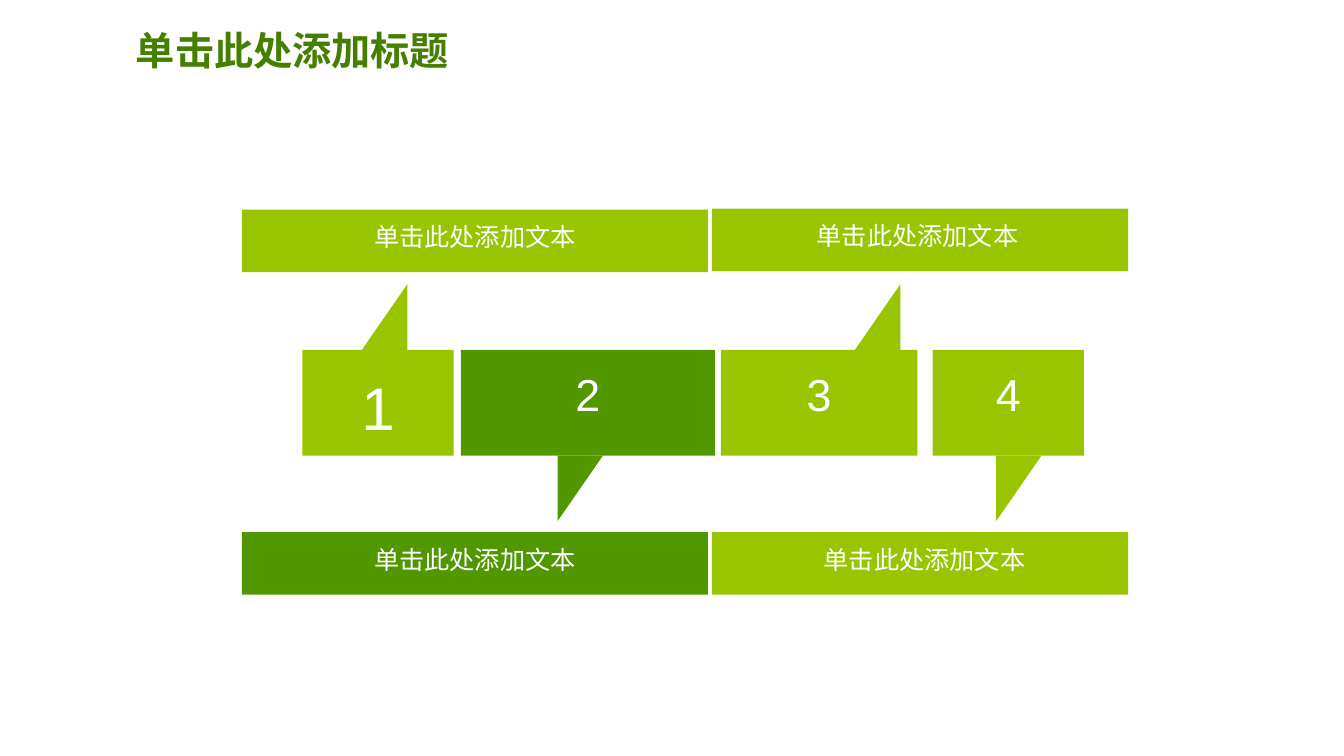
from dataclasses import dataclass

from pptx import Presentation
from pptx.dml.color import RGBColor
from pptx.enum.shapes import MSO_SHAPE as Preset
from pptx.enum.text import MSO_ANCHOR as Anchor, PP_ALIGN as Align
from pptx.util import Inches, Pt


@dataclass(frozen=True)
class Theme:
    white: RGBColor = RGBColor(0xFF, 0xFF, 0xFF)
    lime: RGBColor = RGBColor(0x99, 0xC4, 0x00)
    green: RGBColor = RGBColor(0x51, 0x97, 0x00)
    title: RGBColor = RGBColor(0x44, 0x7F, 0x00)
    body_font: str = "Arial"
    title_font: str = "Montserrat"
    title_size: int = 28
    label_size: int = 18
    number_size: int = 32
    first_number_size: int = 43


THEME = Theme()
LABEL = "单击此处添加文本"
BAR_HEIGHT = 0.62
BLOCK_TOP, BLOCK_HEIGHT = 3.47, 1.05
POINTER_WIDTH, POINTER_HEIGHT = 0.45, 0.65

# left, top, width, colour, left of the label
BARS = [
    (2.4, 2.08, 4.62, THEME.lime, 2.72),
    (7.06, 2.07, 4.13, THEME.lime, 7.11),
    (2.4, 5.28, 4.62, THEME.green, 2.72),
    (7.06, 5.28, 4.13, THEME.lime, 7.18),
]
# left, width, colour, left of the pointer, pointer goes up, number size
BLOCKS = [
    (3, 1.5, THEME.lime, 3.59, True, THEME.first_number_size),
    (4.57, 2.52, THEME.green, 5.53, False, THEME.number_size),
    (7.15, 1.95, THEME.lime, 8.48, True, THEME.number_size),
    (9.25, 1.5, THEME.lime, 9.88, False, THEME.number_size),
]


def add_filled(slide, preset, box, colour):
    shape = slide.shapes.add_shape(preset, *map(Inches, box))
    shape.shadow.inherit = False
    shape.fill.solid()
    shape.fill.fore_color.rgb = colour
    shape.line.fill.background()
    return shape


def add_text(slide, box, text, size, colour=THEME.white, font=THEME.body_font,
             align=Align.CENTER, inset=0.05):
    frame = slide.shapes.add_textbox(*map(Inches, box)).text_frame
    frame.word_wrap = True
    frame.margin_left = frame.margin_right = Inches(0.1)
    frame.margin_top = frame.margin_bottom = Inches(inset)
    paragraph = frame.paragraphs[0]
    paragraph.alignment = align
    run = paragraph.add_run()
    run.text = text
    run.font.name = font
    run.font.size = Pt(size)
    run.font.color.rgb = colour
    return frame


def add_title(slide, box):
    frame = add_text(slide, box, "单击此处添加标题", THEME.title_size,
                     THEME.title, THEME.title_font, Align.LEFT)
    frame.vertical_anchor = Anchor.MIDDLE
    paragraph = frame.paragraphs[0]
    paragraph.line_spacing = 0.9
    paragraph.runs[0].font.bold = True


def add_bar(slide, box, colour, label_left):
    add_filled(slide, Preset.RECTANGLE, box, colour)
    add_text(slide, (label_left, box[1] + 0.07, 3.98, 0.41), LABEL, THEME.label_size)


def add_block(slide, box, colour, number, size, pointer_left, points_up):
    """Draw a numbered block with a triangular pointer on its top or bottom edge."""
    left, top, width, height = box
    add_filled(slide, Preset.RECTANGLE, box, colour)

    pointer_top = top - POINTER_HEIGHT if points_up else top + height
    pointer = add_filled(slide, Preset.RIGHT_TRIANGLE,
                         (pointer_left, pointer_top, POINTER_WIDTH, POINTER_HEIGHT), colour)
    pointer.element.spPr.xfrm.set("flipH" if points_up else "flipV", "1")

    is_first = size == THEME.first_number_size
    number_width, number_height = 0.59, 0.93 if is_first else 0.74
    number_box = (left + (width - number_width) / 2, top + (0.1 if is_first else 0.07),
                  number_width, number_height)
    add_text(slide, number_box, str(number), size, inset=0.1)


def main():
    presentation = Presentation()
    presentation.slide_width = Inches(13.33)
    presentation.slide_height = Inches(7.5)
    slide = presentation.slides.add_slide(presentation.slide_layouts[6])
    slide.background.fill.solid()
    slide.background.fill.fore_color.rgb = THEME.white

    for left, top, width, colour, label_left in BARS:
        add_bar(slide, (left, top, width, BAR_HEIGHT), colour, label_left)
    for number, (left, width, colour, pointer_left, points_up, size) in enumerate(BLOCKS, 1):
        add_block(slide, (left, BLOCK_TOP, width, BLOCK_HEIGHT), colour, number, size,
                  pointer_left, points_up)
    add_title(slide, (1.25, 0.1, 11.5, 0.85))

    presentation.save("out.pptx")


if __name__ == "__main__":
    main()
